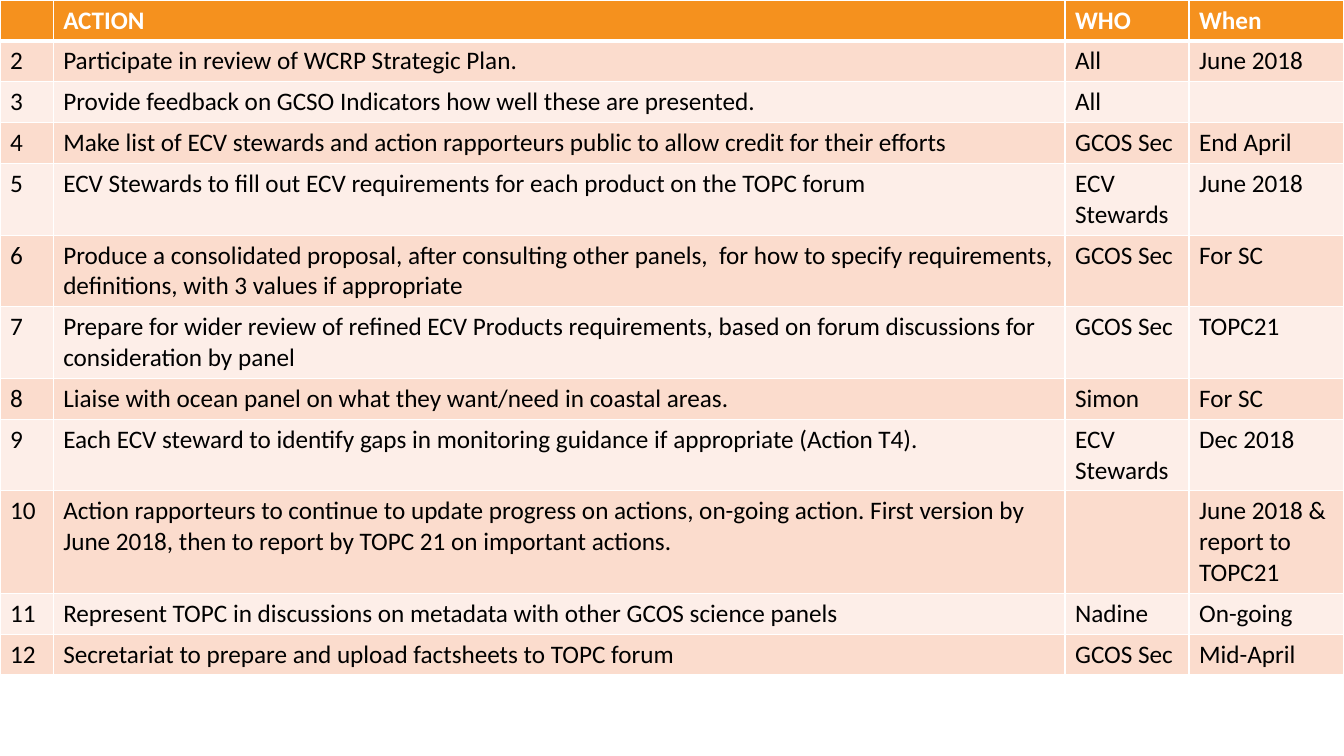
from lxml.etree import SubElement
from pptx import Presentation
from pptx.dml.color import RGBColor
from pptx.oxml.ns import qn
from pptx.util import Pt

HEADER = ("", "ACTION", "WHO", "When")
ACTIONS = [
    ("2", "Participate in review of WCRP Strategic Plan.", "All", "June 2018"),
    ("3", "Provide feedback on GCSO Indicators how well these are presented.", "All", ""),
    ("4", "Make list of ECV stewards and action rapporteurs public to allow credit for their efforts",
     "GCOS Sec", "End April"),
    ("5", "ECV Stewards to fill out ECV requirements for each product on the TOPC forum",
     "ECV Stewards", "June 2018"),
    ("6", "Produce a consolidated proposal, after consulting other panels,  for how to specify "
          "requirements, definitions, with 3 values if appropriate", "GCOS Sec", "For SC"),
    ("7", "Prepare for wider review of refined ECV Products requirements, based on forum "
          "discussions for consideration by panel", "GCOS Sec", "TOPC21"),
    ("8", "Liaise with ocean panel on what they want/need in coastal areas.", "Simon", "For SC"),
    ("9", "Each ECV steward to identify gaps in monitoring guidance if appropriate (Action T4).",
     "ECV Stewards", "Dec 2018"),
    ("10", "Action rapporteurs to continue to update progress on actions, on-going action. First "
           "version by June 2018, then to report by TOPC 21 on important actions.",
     "", "June 2018 & report to TOPC21"),
    ("11", "Represent TOPC in discussions on metadata with other GCOS science panels",
     "Nadine", "On-going"),
    ("12", "Secretariat to prepare and upload factsheets to TOPC forum", "GCOS Sec", "Mid-April"),
]
COL_WIDTHS = (38, 722.8, 88.6, 110.6)
ROW_HEIGHT = 29.2
ORANGE, BANDS = "F5911E", ("FBDCCD", "FDEEE8")
WHITE, BLACK = "FFFFFF", "000000"


def rgb(color):
    return RGBColor.from_string(color)


def add_borders(cell, top, bottom):
    """Draw white cell edges; widths in points, the sides always 1."""
    tcPr = cell._tc.get_or_add_tcPr()
    for side, width in (("L", 1), ("R", 1), ("T", top), ("B", bottom)):
        ln = SubElement(tcPr, qn(f"a:ln{side}"), w=str(Pt(width)))
        SubElement(SubElement(ln, qn("a:solidFill")), qn("a:srgbClr"), val=WHITE)


def fill_cell(cell, text, row):
    header = row == 0
    add_borders(cell, 3 if row == 1 else 1, 3 if header else 1)
    cell.fill.solid()
    cell.fill.fore_color.rgb = rgb(ORANGE if header else BANDS[(row - 1) % 2])
    p = cell.text_frame.paragraphs[0]
    p.font.size = Pt(18)
    if text:
        r = p.add_run()
        r.text = text
        r.font.name, r.font.size, r.font.bold = "Calibri", Pt(18), header
        r.font.color.rgb = rgb(WHITE if header else BLACK)


def main():
    prs = Presentation()
    prs.slide_width, prs.slide_height = Pt(960), Pt(540)
    s = prs.slides.add_slide(prs.slide_layouts[6])
    rows = [HEADER] + ACTIONS
    table = s.shapes.add_table(len(rows), len(HEADER), 0, 0, Pt(sum(COL_WIDTHS)),
                               Pt(ROW_HEIGHT * len(rows))).table
    for column, width in zip(table.columns, COL_WIDTHS):
        column.width = Pt(width)
    for i, texts in enumerate(rows):
        table.rows[i].height = Pt(ROW_HEIGHT)
        for j, text in enumerate(texts):
            fill_cell(table.cell(i, j), text, i)
    prs.save("out.pptx")


if __name__ == "__main__":
    main()
